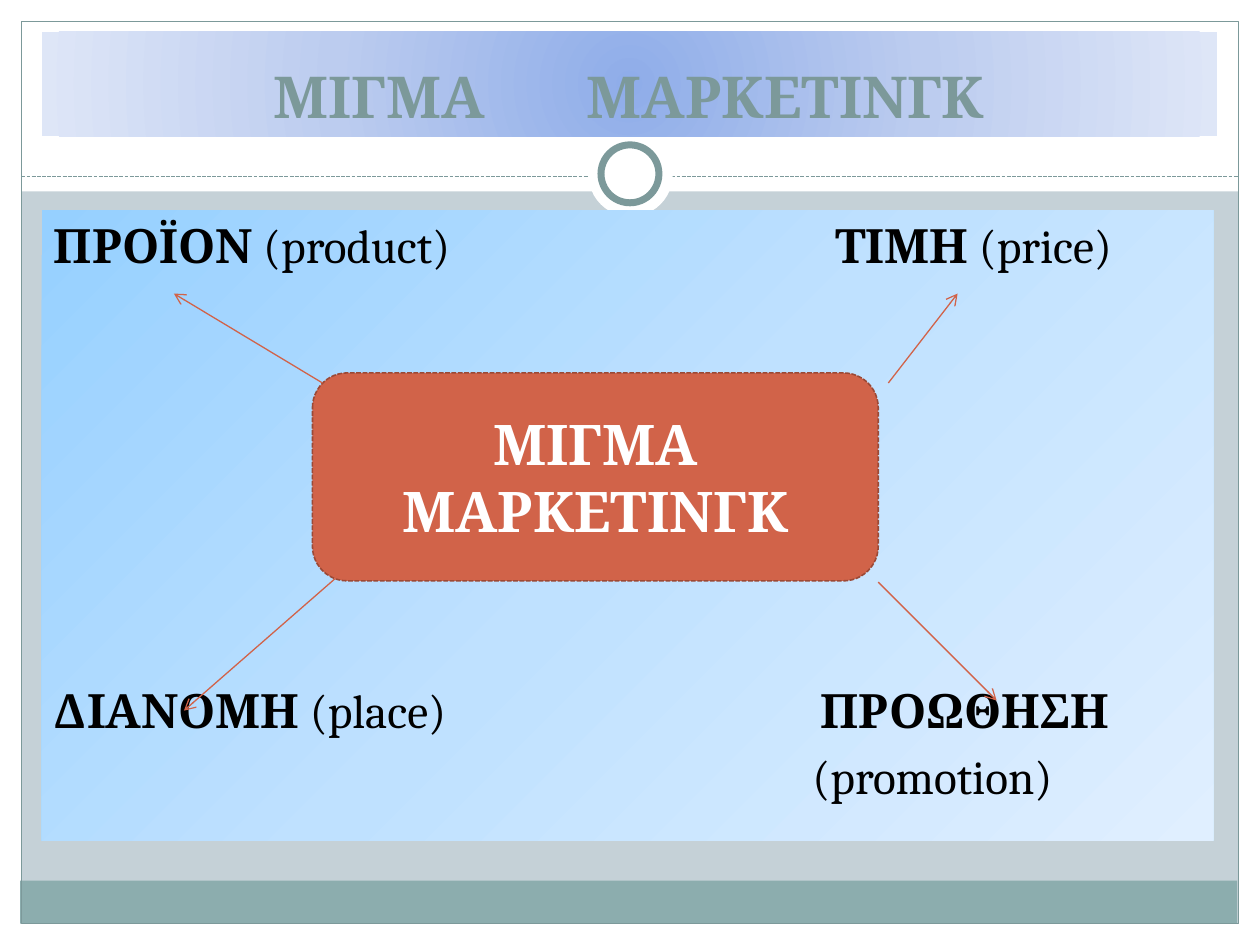
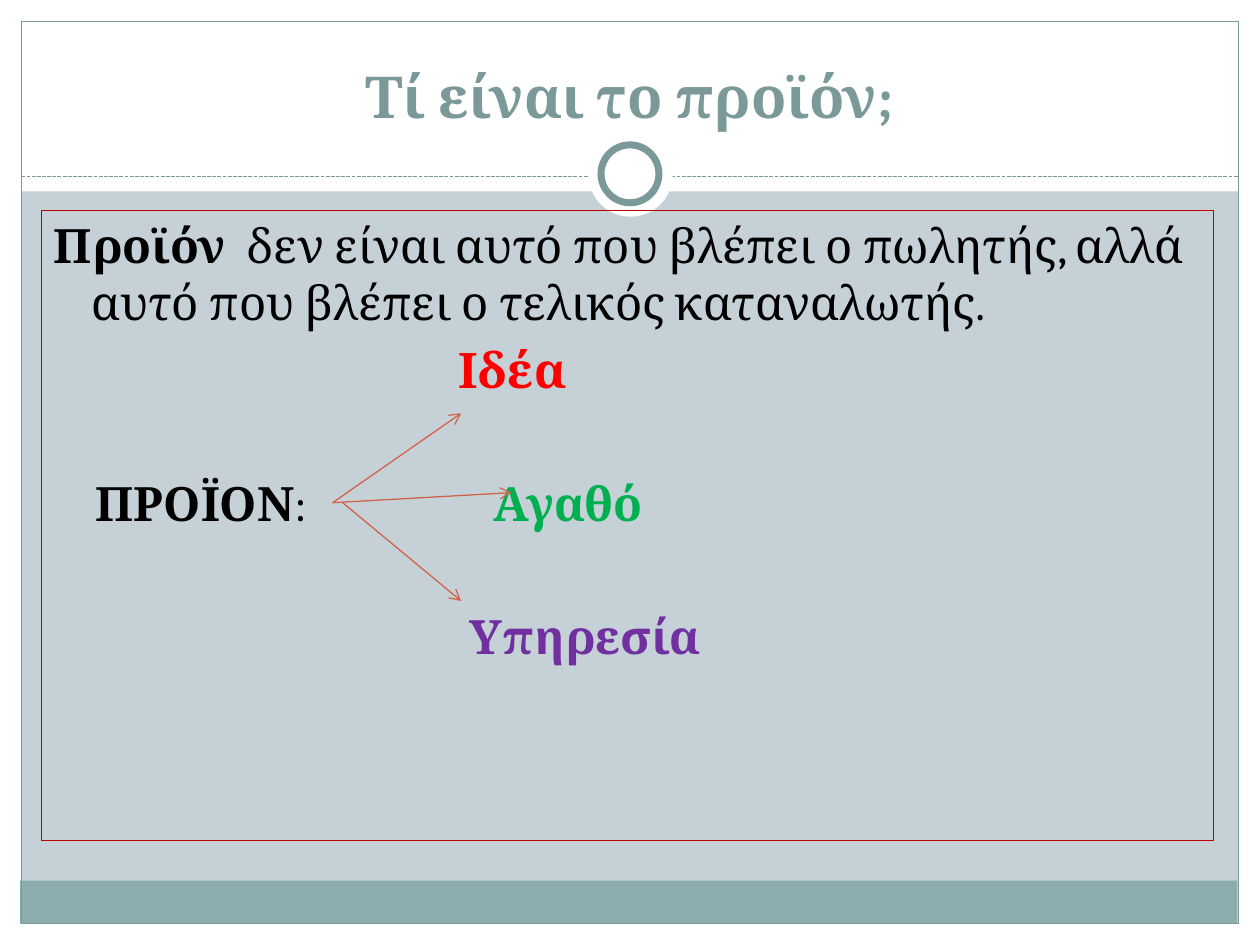
from dataclasses import dataclass
from typing import Optional

from lxml.etree import SubElement
from pptx import Presentation
from pptx.dml.color import RGBColor
from pptx.enum.dml import MSO_LINE
from pptx.enum.shapes import MSO_CONNECTOR, MSO_SHAPE
from pptx.enum.text import MSO_ANCHOR, MSO_AUTO_SIZE, PP_ALIGN
from pptx.oxml.ns import qn
from pptx.util import Inches, Pt


@dataclass(frozen=True)
class Theme:
    font: str = "Cambria"
    white: str = "FFFFFF"
    black: str = "000000"
    background: str = "C5D1D7"
    band: str = "8CADAE"
    frame: str = "7C999A"
    accent: str = "D16349"
    accent_dark: str = "9B4936"
    border: str = "C00000"
    idea: str = "FF0000"
    good: str = "00B050"
    service: str = "7030A0"
    title_glow: tuple = ("8FADE9", "BCCCEF", "DEE6F7")
    panel_sky: tuple = ("96D0FF", "BFE1FF", "E0EFFF")
    title_size: float = 33
    hub_size: float = 32
    body_size: float = 27
    idea_size: float = 28
    thin: float = 0.75


THEME = Theme()
ROW_SPACE = 5.4    # points above a row of the panel
ROW_HEIGHT = 37.9  # points from one row to the next


@dataclass(frozen=True)
class Box:
    left: float
    top: float
    width: float
    height: float

    def emu(self) -> tuple:
        return tuple(Inches(v) for v in (self.left, self.top, self.width, self.height))


@dataclass(frozen=True)
class Span:
    text: str
    bold: bool = False
    color: str = THEME.black
    size: float = THEME.body_size
    gap: float = 0  # extra points after each character


@dataclass(frozen=True)
class Row:
    spans: tuple
    left: float = 0        # inches from the panel's text edge
    hanging: float = 0     # inches the first line starts before left
    skipped: int = 0       # row heights left free above


@dataclass(frozen=True)
class Arrow:
    start: tuple
    end: tuple


TITLE_BOX = Box(0.33, 0.25, 9.33, 0.83)
PANEL_BOX = Box(0.33, 1.67, 9.3, 5)
HUB_BOX = Box(2.48, 2.96, 4.49, 1.65)


def rgb(value: str) -> RGBColor:
    return RGBColor.from_string(value)


def set_line(line, color: str, width: float, dash=None) -> None:
    line.color.rgb = rgb(color)
    line.width = Pt(width)
    if dash:
        line.dash_style = dash


def add_plain_shape(page, kind, box: Box, fill: Optional[str] = None):
    shape = page.shapes.add_shape(kind, *box.emu())
    shape.shadow.inherit = False
    if fill:
        shape.fill.solid()
        shape.fill.fore_color.rgb = rgb(fill)
    else:
        shape.fill.background()
    shape.line.fill.background()
    return shape


def add_line(page, start: tuple, end: tuple, color: str, dash=None):
    points = [Inches(v) for v in (*start, *end)]
    line = page.shapes.add_connector(MSO_CONNECTOR.STRAIGHT, *points)
    set_line(line.line, color, THEME.thin, dash)
    SubElement(line.element.spPr, qn("a:effectLst"))
    return line


def add_arrow(page, arrow: Arrow) -> None:
    line = add_line(page, arrow.start, arrow.end, THEME.accent)
    outline = line.element.spPr.find(qn("a:ln"))
    SubElement(outline, qn("a:tailEnd"), type="arrow")


def fill_gradient(shape, colors: tuple, angle: Optional[int] = None) -> None:
    """Spread the colours evenly, along an angle or outwards from the centre."""
    shape.fill.solid()
    solid = shape.element.spPr.find(qn("a:solidFill"))
    gradient = SubElement(shape.element.spPr, qn("a:gradFill"), rotWithShape="1")
    stops = SubElement(gradient, qn("a:gsLst"))
    for index, color in enumerate(colors):
        position = index * 100000 // (len(colors) - 1)
        stop = SubElement(stops, qn("a:gs"), pos=str(position))
        SubElement(stop, qn("a:srgbClr"), val=color)
    if angle is None:
        path = SubElement(gradient, qn("a:path"))
        path.set("path", "circle")
        SubElement(path, qn("a:fillToRect"), l="50000", t="50000", r="50000", b="50000")
    else:
        SubElement(gradient, qn("a:lin"), ang=str(angle * 60000), scaled="0")
    solid.getparent().replace(solid, gradient)


def write_spans(para, spans: tuple) -> None:
    para.font.name = THEME.font
    for item in spans:
        span = para.add_run()
        span.text = item.text
        span.font.name = THEME.font
        span.font.size = Pt(item.size)
        span.font.bold = item.bold
        span.font.color.rgb = rgb(item.color)
        if item.gap:
            span.font._element.set("spc", str(round(item.gap * 100)))


def write_centred(shape, spans: tuple, anchor) -> None:
    frame = shape.text_frame
    frame.word_wrap = True
    frame.auto_size = MSO_AUTO_SIZE.NONE
    frame.vertical_anchor = anchor
    para = frame.paragraphs[0]
    para.alignment = PP_ALIGN.CENTER
    write_spans(para, spans)


def set_indent(para, row: Row) -> None:
    properties = para._p.get_or_add_pPr()
    properties.set("marL", str(Inches(row.left)))
    properties.set("indent", str(-Inches(row.hanging)))


def add_panel(page, rows: tuple):
    panel = add_plain_shape(page, MSO_SHAPE.RECTANGLE, PANEL_BOX)
    frame = panel.text_frame
    frame.word_wrap = True
    frame.vertical_anchor = MSO_ANCHOR.TOP
    for index, row in enumerate(rows):
        para = frame.add_paragraph() if index else frame.paragraphs[0]
        para.alignment = PP_ALIGN.LEFT
        para.space_before = Pt(ROW_SPACE + row.skipped * ROW_HEIGHT)
        set_indent(para, row)
        write_spans(para, row.spans)
    return panel


def set_title(page, *spans: Span):
    title = page.shapes.title
    title.left, title.top, title.width, title.height = TITLE_BOX.emu()
    write_centred(title, spans, MSO_ANCHOR.BOTTOM)
    return title


def title_span(text: str, gap: float = 0) -> Span:
    return Span(text, True, THEME.frame, THEME.title_size, gap)


def dress_layout(layout, page) -> None:
    """Draw the shared frame on a page and move it to the layout."""
    layout.background.fill.solid()
    layout.background.fill.fore_color.rgb = rgb(THEME.background)
    for placeholder in list(layout.placeholders):
        if placeholder.placeholder_format.idx:
            layout.shapes.element.remove(placeholder.element)

    bands = (
        (Box(0, 7.33, 10, 0.17), THEME.white),
        (Box(0, 0, 10, 1.52), THEME.white),
        (Box(0, 0, 0.17, 7.5), THEME.white),
        (Box(9.83, 0, 0.17, 7.5), THEME.white),
        (Box(0.16, 6.99, 9.66, 0.34), THEME.band),
    )
    parts = [add_plain_shape(page, MSO_SHAPE.RECTANGLE, *band) for band in bands]
    border = add_plain_shape(page, MSO_SHAPE.RECTANGLE, Box(0.17, 0.17, 9.66, 7.16))
    set_line(border.line, THEME.frame, THEME.thin)
    rule = add_line(page, (0.17, 1.4), (9.83, 1.4), THEME.frame, MSO_LINE.SQUARE_DOT)
    disc = add_plain_shape(page, MSO_SHAPE.OVAL, Box(4.67, 1.05, 0.67, 0.67), THEME.white)
    ring = add_plain_shape(page, MSO_SHAPE.OVAL, Box(4.77, 1.15, 0.46, 0.46), THEME.white)
    set_line(ring.line, THEME.frame, 4)
    for part in (*parts, border, rule, disc, ring):
        layout.shapes.element.append(part.element)


def build_mix_page(page) -> None:
    title = set_title(page, title_span("ΜΙΓΜΑ"), title_span(" ", gap=51),
                      title_span("ΜΑΡΚΕΤΙΝΓΚ"))
    fill_gradient(title, THEME.title_glow)

    panel = add_panel(page, (
        Row((Span("ΠΡΟΪΟΝ ", True), Span("(product)"), Span(" ", gap=214),
             Span("ΤΙΜΗ", True), Span(" (price)"))),
        Row((Span("ΔΙΑΝΟΜΗ ", True), Span("(place)"), Span(" ", gap=208),
             Span("ΠΡΟΩΘΗΣΗ", True)), skipped=6),
        Row((Span("(promotion)"),), left=6.02),
    ))
    fill_gradient(panel, THEME.panel_sky, angle=45)

    hub = add_plain_shape(page, MSO_SHAPE.ROUNDED_RECTANGLE, HUB_BOX, THEME.accent)
    set_line(hub.line, THEME.accent_dark, 0.9, MSO_LINE.SQUARE_DOT)
    hub_text = Span("ΜΙΓΜΑ ΜΑΡΚΕΤΙΝΓΚ", True, THEME.white, THEME.hub_size)
    write_centred(hub, (hub_text,), MSO_ANCHOR.MIDDLE)

    for arrow in (
        Arrow((2.56, 3.04), (1.38, 2.33)),
        Arrow((7.05, 3.04), (7.6, 2.33)),
        Arrow((2.72, 4.54), (1.46, 5.64)),
        Arrow((6.97, 4.62), (7.91, 5.56)),
    ):
        add_arrow(page, arrow)


def build_product_page(page) -> None:
    set_title(page, title_span("Τί είναι το προϊόν;"))
    panel = add_panel(page, (
        Row((Span("Προϊόν", True), Span(" ", True, gap=6),
             Span("δεν είναι αυτό που βλέπει ο πωλητής, αλλά αυτό που "
                  "βλέπει ο τελικός καταναλωτής.")), left=0.3, hanging=0.3),
        Row((Span("Ιδέα", True, THEME.idea, THEME.idea_size),), left=3.21),
        Row((Span("ΠΡΟΪΟΝ", True), Span(":"), Span(" ", gap=101),
             Span("Αγαθό", True, THEME.good)), left=0.33, skipped=1),
        Row((Span("Υπηρεσία", True, THEME.service),), left=3.3, skipped=1),
    ))
    set_line(panel.line, THEME.border, THEME.thin)

    for arrow in (
        Arrow((2.64, 3.99), (3.66, 3.28)),
        Arrow((2.64, 3.99), (4.06, 3.91)),
        Arrow((2.72, 3.99), (3.66, 4.77)),
    ):
        add_arrow(page, arrow)


def main() -> None:
    deck = Presentation()
    deck.slide_width, deck.slide_height = Inches(10), Inches(7.5)
    layout = deck.slide_layouts.get_by_name("Title Only")
    mix_page, product_page = (deck.slides.add_slide(layout) for _ in range(2))
    dress_layout(layout, mix_page)
    build_mix_page(mix_page)
    build_product_page(product_page)
    deck.save("out.pptx")


if __name__ == "__main__":
    main()
